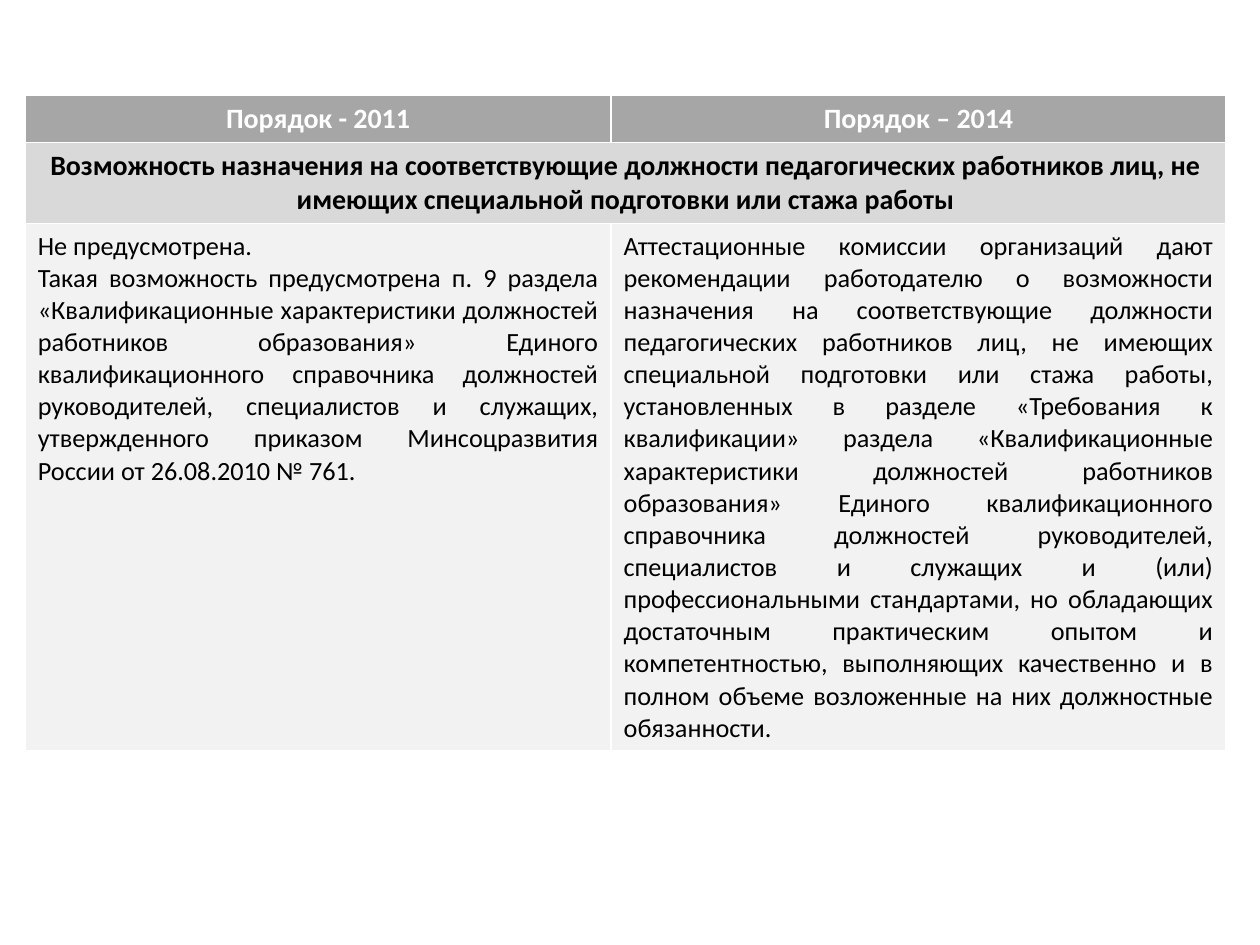
from pptx import Presentation
from pptx.dml.color import RGBColor
from pptx.enum.text import PP_ALIGN
from pptx.util import Pt

WHITE = RGBColor(0xFF, 0xFF, 0xFF)
BLACK = RGBColor(0x00, 0x00, 0x00)
HEADER_GRAY = RGBColor(0xA6, 0xA6, 0xA6)
TOPIC_GRAY = RGBColor(0xD9, 0xD9, 0xD9)
BODY_GRAY = RGBColor(0xF2, 0xF2, 0xF2)

COL_WIDTHS = [334.8, 351.4]
ROW_HEIGHTS = [26.5, 45.5, 301]

TOPIC = (
    "Возможность назначения на соответствующие должности педагогических "
    "работников лиц, не имеющих специальной подготовки или стажа работы"
)
ORDER_2011 = (
    "Не предусмотрена.\n"
    "Такая возможность предусмотрена п. 9 раздела «Квалификационные "
    "характеристики должностей работников образования» Единого "
    "квалификационного справочника должностей руководителей, специалистов и "
    "служащих, утвержденного приказом Минсоцразвития России от 26.08.2010 № 761."
)
ORDER_2014 = (
    "Аттестационные комиссии организаций дают рекомендации работодателю о "
    "возможности назначения на соответствующие должности педагогических "
    "работников лиц, не имеющих специальной подготовки или стажа работы, "
    "установленных в разделе «Требования к квалификации» раздела "
    "«Квалификационные характеристики должностей работников образования» "
    "Единого квалификационного справочника должностей руководителей, "
    "специалистов и служащих и (или) профессиональными стандартами, но "
    "обладающих достаточным практическим опытом и компетентностью, "
    "выполняющих качественно и в полном объеме возложенные на них "
    "должностные обязанности."
)

# Each row: cell texts, fill, font colour, size, bold, alignment
ROWS = [
    (["Порядок - 2011", "Порядок – 2014"], HEADER_GRAY, WHITE, 16, True, PP_ALIGN.CENTER),
    ([TOPIC], TOPIC_GRAY, BLACK, 16, True, PP_ALIGN.CENTER),
    ([ORDER_2011, ORDER_2014], BODY_GRAY, BLACK, 15, False, PP_ALIGN.JUSTIFY),
]

prs = Presentation()
prs.slide_width, prs.slide_height = Pt(720), Pt(540)
s = prs.slides.add_slide(prs.slide_layouts[6])

# The default table style draws the white borders
table = s.shapes.add_table(
    len(ROW_HEIGHTS), len(COL_WIDTHS), Pt(14.4), Pt(54.7),
    Pt(sum(COL_WIDTHS)), Pt(sum(ROW_HEIGHTS)),
).table
for col, width in zip(table.columns, COL_WIDTHS):
    col.width = Pt(width)
for row, height in zip(table.rows, ROW_HEIGHTS):
    row.height = Pt(height)
table.cell(1, 0).merge(table.cell(1, 1))

for row, (texts, fill, color, size, bold, align) in zip(table.rows, ROWS):
    for cell, text in zip(row.cells, texts):
        cell.fill.solid()
        cell.fill.fore_color.rgb = fill
        cell.text = text
        for p in cell.text_frame.paragraphs:
            p.alignment = align
            p.font.name = "Calibri"
            p.font.size = Pt(size)
            p.font.bold = bold
            p.font.color.rgb = color

prs.save("out.pptx")
